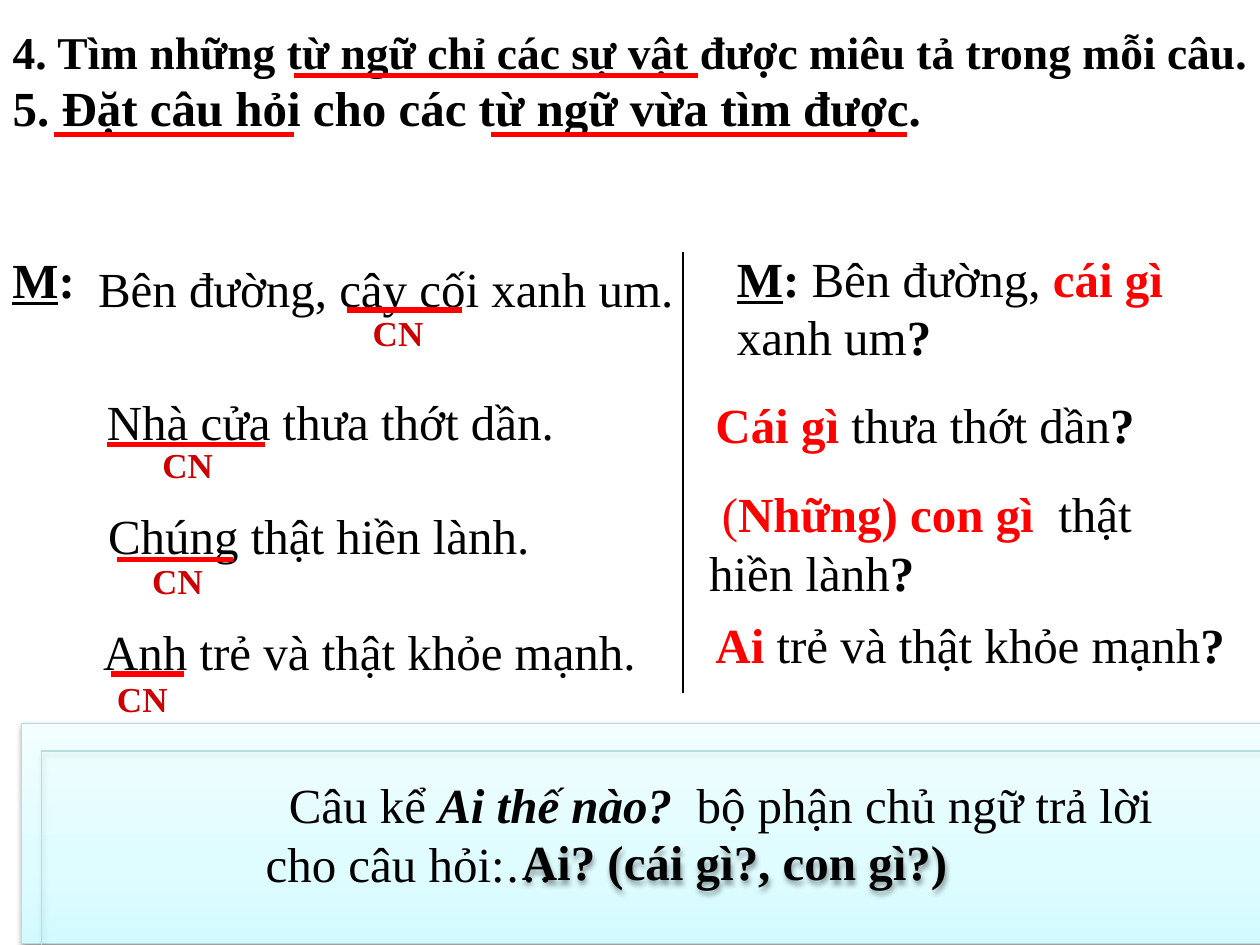
"""Build a grammar exercise slide on subjects and the questions that ask for them."""
from copy import deepcopy
from dataclasses import dataclass

from lxml.etree import SubElement
from pptx import Presentation
from pptx.dml.color import RGBColor
from pptx.enum.shapes import MSO_CONNECTOR, MSO_SHAPE
from pptx.enum.text import MSO_ANCHOR, MSO_AUTO_SIZE, PP_ALIGN
from pptx.oxml.ns import qn
from pptx.util import Inches, Pt

FONT = "Times New Roman"
BLACK, RED, DARK_RED, PANEL_LINE = "000000", "FF0000", "CC0000", "B6DCDF"
PANEL_STOPS = [(0, "D3FBFF"), (0.35, "DFFCFF"), (1, "F2FEFF")]


@dataclass
class Piece:
    text: str
    color: str = BLACK
    bold: bool = False
    italic: bool = False
    underline: bool = False
    size: int = 28


@dataclass
class Sentence:
    text: str
    left: float
    top: float
    width: float
    subject_start: float
    subject_end: float
    underline_top: float
    label_left: float
    label_top: float


@dataclass
class Question:
    pieces: list[Piece]
    left: float
    top: float
    width: float
    height: float = 0.57
    indent: float = 0


MARK = Piece("?", bold=True)
MODEL = [Piece("M", bold=True, underline=True), Piece(":", bold=True)]

SENTENCES = [
    Sentence("Bên đường, cây cối xanh um.", 0.68, 2, 5.06, 2.75, 3.67, 2.46, 2.86, 2.42),
    Sentence("Nhà cửa thưa thớt dần.", 0.75, 3.06, 4.5, 0.85, 2.1, 3.53, 1.19, 3.47),
    Sentence("Chúng thật hiền lành.", 0.76, 3.96, 4.32, 0.93, 1.85, 4.44, 1.11, 4.39),
    Sentence("Anh trẻ và thật khỏe mạnh.", 0.72, 4.88, 4.61, 0.88, 1.46, 5.35, 0.83, 5.33),
]
QUESTIONS = [
    Question([*MODEL, Piece(" Bên đường,"), Piece(" cái gì", RED, True),
              Piece(" xanh um"), MARK], 5.75, 1.92, 4.25, 1.03),
    Question([Piece("Cái gì", RED, True), Piece(" thưa thớt dần"), MARK], 5.58, 3.08, 4.67),
    Question([Piece("(", RED), Piece("Những) con gì  ", RED, True),
              Piece("thật hiền lành"), MARK], 5.53, 3.79, 4.25, 1.03, 0.1),
    Question([Piece("Ai ", RED, True), Piece("trẻ và thật khỏe mạnh"), MARK], 5.58, 4.83, 4.54),
]
HEADINGS = [
    (Piece("4. Tìm những từ ngữ chỉ các sự vật được miêu tả trong mỗi câu.",
           bold=True, size=26), 0.05, 0.72),
    (Piece("5. Đặt câu hỏi cho các từ ngữ vừa tìm được.", bold=True), 0.47, 0.75),
]
HEADING_UNDERLINES = [(2.33, 5.54, 0.6), (0.43, 2.33, 1.07), (3.9, 7.2, 1.07)]


def rgb(color: str) -> RGBColor:
    return RGBColor.from_string(color)


def write(paragraph, pieces: list[Piece], margin: float = 0, indent: float = 0) -> None:
    properties = paragraph._p.get_or_add_pPr()
    properties.set("marL", str(Inches(margin)))
    properties.set("indent", str(Inches(indent)))
    for piece in pieces:
        run = paragraph.add_run()
        run.text = piece.text
        font = run.font
        font.name, font.size, font.color.rgb = FONT, Pt(piece.size), rgb(piece.color)
        font.bold, font.italic, font.underline = piece.bold, piece.italic, piece.underline


def add_text(slide, pieces: list[Piece], left: float, top: float, width: float,
             height: float = 0.57, indent: float = 0) -> None:
    box = slide.shapes.add_textbox(Inches(left), Inches(top), Inches(width), Inches(height))
    box.text_frame.word_wrap = True
    write(box.text_frame.paragraphs[0], pieces, indent=indent)


def add_line(slide, start: tuple[float, float], end: tuple[float, float],
             color: str = RED, width: float = 3) -> None:
    line = slide.shapes.add_connector(
        MSO_CONNECTOR.STRAIGHT, *(Inches(value) for value in (*start, *end)))
    line.line.color.rgb, line.line.width = rgb(color), Pt(width)
    SubElement(line._element.spPr, qn("a:effectLst"))


def fill_heading(placeholder, piece: Piece, top: float, height: float) -> None:
    placeholder.left, placeholder.top = Inches(0), Inches(top)
    placeholder.width, placeholder.height = Inches(10), Inches(height)
    frame = placeholder.text_frame
    frame.word_wrap, frame.auto_size = True, MSO_AUTO_SIZE.NONE
    frame.vertical_anchor = MSO_ANCHOR.MIDDLE
    frame.margin_right = Inches(0)
    paragraph = frame.paragraphs[0]
    paragraph.alignment, paragraph.space_before = PP_ALIGN.LEFT, Pt(0)
    write(paragraph, [piece])
    SubElement(paragraph._p.get_or_add_pPr(), qn("a:buNone"))


def add_panel(slide, left: float, top: float):
    panel = slide.shapes.add_shape(
        MSO_SHAPE.RECTANGLE, Inches(left), Inches(top), Inches(10), Inches(1.75))
    panel.fill.background()
    panel.line.color.rgb, panel.line.width = rgb(PANEL_LINE), Pt(0.75)
    panel.shadow.inherit = False
    effects = panel._element.spPr.find(qn("a:effectLst"))
    shadow = SubElement(effects, qn("a:outerShdw"), blurRad=str(Pt(3.1)),
                        dist=str(Pt(1.6)), dir="5400000", rotWithShape="0")
    shade = SubElement(shadow, qn("a:srgbClr"), val=BLACK)
    SubElement(shade, qn("a:alpha"), val="38000")
    panel.text_frame.word_wrap = True
    panel.text_frame.vertical_anchor = MSO_ANCHOR.MIDDLE
    return panel


def fill_gradient(panel) -> None:
    panel.fill.gradient()
    panel.fill.gradient_angle = 90
    stop_list = panel._element.spPr.find(".//" + qn("a:gsLst"))
    stop_list.append(deepcopy(stop_list[0]))
    for stop, (position, color) in zip(panel.fill.gradient_stops, PANEL_STOPS):
        stop.position, stop.color.rgb = position, rgb(color)


def add_conclusion(slide) -> None:
    rule = add_panel(slide, 0.17, 5.74)
    fill_gradient(rule)
    first = rule.text_frame.paragraphs[0]
    first.alignment = PP_ALIGN.CENTER
    write(first, [Piece("Câu kể "), Piece("Ai thế nào?  ", bold=True, italic=True),
                  Piece("bộ phận chủ ngữ trả lời")], margin=1.1)
    second = rule.text_frame.add_paragraph()
    second.alignment = PP_ALIGN.LEFT
    write(second, [Piece("cho câu hỏi:…")], margin=1.84)

    answer = add_panel(slide, 0.33, 5.96).text_frame.paragraphs[0]
    answer.alignment = PP_ALIGN.CENTER
    write(answer, [Piece("Ai? (cái gì?, con gì?)", bold=True)], margin=1)


def main() -> None:
    presentation = Presentation()
    presentation.slide_width, presentation.slide_height = Inches(10), Inches(7.5)
    slide = presentation.slides.add_slide(presentation.slide_layouts[1])
    for placeholder, heading in zip(slide.placeholders, HEADINGS):
        fill_heading(placeholder, *heading)
    for start, end, top in HEADING_UNDERLINES:
        add_line(slide, (start, top), (end, top))
    add_conclusion(slide)

    add_text(slide, MODEL, 0, 1.93, 0.75)
    for sentence in SENTENCES:
        add_text(slide, [Piece(sentence.text)], sentence.left, sentence.top, sentence.width)
        add_line(slide, (sentence.subject_start, sentence.underline_top),
                 (sentence.subject_end, sentence.underline_top))
        add_text(slide, [Piece("CN", DARK_RED, True, size=20)],
                 sentence.label_left, sentence.label_top, 0.92, 0.43)

    add_line(slide, (5.42, 2), (5.42, 5.5), BLACK, 0.75)
    for question in QUESTIONS:
        add_text(slide, question.pieces, question.left, question.top,
                 question.width, question.height, question.indent)
    presentation.save("out.pptx")


if __name__ == "__main__":
    main()
